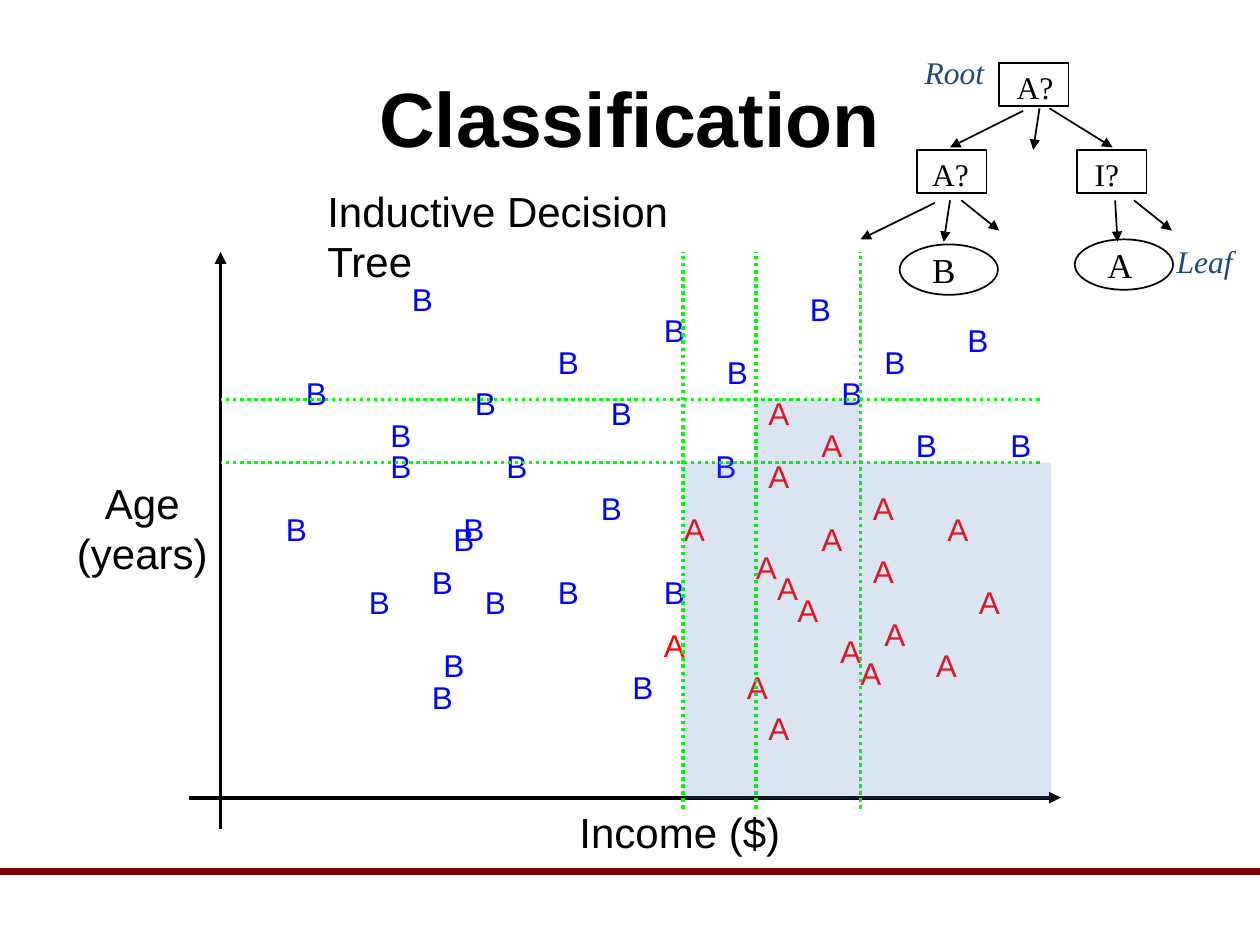
from dataclasses import dataclass, field
from typing import Optional

import pptx
import pptx.dml.color
import pptx.enum.dml
import pptx.enum.shapes
import pptx.enum.text
import pptx.oxml.ns
import pptx.util
from lxml import etree

RGBColor = pptx.dml.color.RGBColor
BLACK = RGBColor(0x00, 0x00, 0x00)
RED = RGBColor(0xFF, 0x00, 0x00)
BLUE = RGBColor(0x00, 0x00, 0xFF)
GREEN = RGBColor(0x00, 0xFF, 0x00)
MAROON = RGBColor(0x80, 0x00, 0x00)
NAVY = RGBColor(0x1F, 0x49, 0x7D)
SHADE = RGBColor(0x4F, 0x81, 0xBD)

SHAPES = pptx.enum.shapes.MSO_SHAPE
ALIGN = pptx.enum.text.PP_ALIGN
ANCHOR = pptx.enum.text.MSO_ANCHOR
AUTO_SIZE = pptx.enum.text.MSO_AUTO_SIZE
DOTTED = pptx.enum.dml.MSO_LINE.ROUND_DOT


@dataclass
class Label:
    text: str
    left: float
    top: float
    width: float
    height: float
    font: dict
    color: RGBColor = BLACK
    paragraph: dict = field(default_factory=dict)
    frame: dict = field(default_factory=dict)


@dataclass
class Line:
    start: tuple[float, float]
    end: tuple[float, float]
    color: RGBColor = BLACK
    weight: float = 1
    dash: Optional[int] = None
    arrow: bool = True


@dataclass
class Outline:
    kind: int
    left: float
    top: float
    width: float
    height: float
    fill: Optional[RGBColor] = None


def length(inches: float) -> pptx.util.Length:
    """Convert layout units (inches) to centimetres."""
    return pptx.util.Cm(inches * 2.54)


def apply(target, values: dict) -> None:
    for name, value in values.items():
        setattr(target, name, value)


def font(size: float, name: str = "Arial", **extra) -> dict:
    return {"name": name, "size": pptx.util.Pt(size), **extra}


def draw_label(slide, label: Label) -> None:
    box = slide.shapes.add_textbox(
        *map(length, (label.left, label.top, label.width, label.height)))
    frame = box.text_frame
    apply(frame, {"word_wrap": False, "auto_size": AUTO_SIZE.SHAPE_TO_FIT_TEXT,
                  **label.frame})
    frame.text = label.text
    for paragraph in frame.paragraphs:
        apply(paragraph, label.paragraph)
        apply(paragraph.font, label.font)
        paragraph.font.color.rgb = label.color


def draw_line(slide, line: Line) -> None:
    connector = slide.shapes.add_connector(
        pptx.enum.shapes.MSO_CONNECTOR.STRAIGHT, *map(length, line.start + line.end))
    connector.line.color.rgb = line.color
    connector.line.width = pptx.util.Pt(line.weight)
    if line.dash is not None:
        connector.line.dash_style = line.dash
    if line.arrow:
        etree.SubElement(connector.line._get_or_add_ln(),
                         pptx.oxml.ns.qn("a:tailEnd"), type="triangle")
    etree.SubElement(connector._element.spPr, pptx.oxml.ns.qn("a:effectLst"))


def draw_outline(slide, outline: Outline) -> None:
    shape = slide.shapes.add_shape(outline.kind, *map(
        length, (outline.left, outline.top, outline.width, outline.height)))
    shape.shadow.inherit = False
    if outline.fill is None:
        shape.fill.background()
        shape.line.color.rgb = BLACK
        shape.line.width = pptx.util.Pt(1)
    else:
        shape.fill.solid()
        shape.fill.fore_color.rgb = outline.fill
        shape.line.fill.background()
        color = shape._element.spPr.find(".//" + pptx.oxml.ns.qn("a:srgbClr"))
        etree.SubElement(color, pptx.oxml.ns.qn("a:alpha"), val="20000")


# Positions of the scattered class marks
B_MARKS = [
    (3.67, 3), (3.92, 3.5), (3.33, 5.33), (4.75, 3.08), (6.92, 2.67), (2.33, 2.92),
    (5.17, 2.42), (7.92, 3.33), (7.17, 3.33), (5.17, 4.5), (3.17, 2.17), (4.92, 5.25),
    (4.33, 4.5), (3.58, 4), (4.67, 3.83), (4.33, 2.67), (3, 3.5), (5.58, 3.5),
    (3.33, 4.42), (5.67, 2.75), (3.5, 4.08), (3.75, 4.58), (2.17, 4), (3, 3.25),
    (3.42, 5.08), (2.83, 4.58), (6.33, 2.25), (7.58, 2.5), (6.58, 2.92),
]
A_MARKS = [
    (5.9, 4.3), (6.07, 4.47), (6.23, 4.64), (6.92, 4.83), (6.83, 3.83), (5.33, 4),
    (5.83, 5.25), (6.57, 4.97), (5.17, 4.92), (7.42, 4), (6, 3.58), (6.73, 5.14),
    (6, 5.58), (6.42, 4.08), (6.83, 4.33), (7.33, 5.08), (7.67, 4.58), (6.42, 3.33),
    (6, 3.08),
]

# Split thresholds and the regions they enclose
INCOME_SPLITS = (5.42, 6, 6.83)
AGE_SPLITS = (3.67, 3.17)
REGIONS = [
    Outline(SHAPES.RECTANGLE, 5.42, 3.67, 2.92, 2.67, SHADE),
    Outline(SHAPES.RECTANGLE, 6, 3.17, 0.83, 0.5, SHADE),
]

# Decision tree
TREE_BOXES = [(7.93, 0.5), (7.28, 1.19), (8.55, 1.19)]
TREE_LEAVES = [(8.53, 1.9), (7.14, 1.94)]
TREE_ARROWS = [
    ((8.12, 0.88), (7.54, 1.17)), ((8.33, 0.86), (8.83, 1.17)),
    ((8.25, 0.86), (8.2, 1.19)), ((7.42, 1.61), (6.83, 1.9)),
    ((7.63, 1.59), (7.93, 1.83)), ((7.54, 1.59), (7.49, 1.92)),
    ((9, 1.59), (9.3, 1.83)), ((8.85, 1.59), (8.87, 1.92)),
]
NODE_FONT = font(18, "Times New Roman")
LEAF_FONT = font(20, "Times New Roman")
NOTE_FONT = font(18, "Times New Roman", italic=True)
TREE_LABELS = [
    Label("A?", 7.97, 0.49, 0.49, 0.4, NODE_FONT),
    Label("A?", 7.3, 1.18, 0.49, 0.4, NODE_FONT),
    Label("I?", 8.59, 1.18, 0.4, 0.4, NODE_FONT),
    Label("Root", 7.24, 0.37, 0.83, 0.4, NOTE_FONT, NAVY, frame={"word_wrap": True}),
    Label("Leaf", 9.24, 1.87, 0.95, 0.4, NOTE_FONT, NAVY, frame={"word_wrap": True}),
    Label("A", 8.69, 1.88, 0.41, 0.43, LEAF_FONT),
    Label("B", 7.3, 1.92, 0.38, 0.43, LEAF_FONT),
]

# Title, subtitle and axis names
CENTERED = {"alignment": ALIGN.CENTER}
TITLE = Label("Classification", 0.5, 0.3, 9, 1.25, font(44, bold=True),
              paragraph=CENTERED,
              frame={"word_wrap": True, "auto_size": AUTO_SIZE.NONE,
                     "vertical_anchor": ANCHOR.MIDDLE})
SUBTITLE = Label("Inductive Decision Tree", 2.5, 1.42, 3.34, 0.5, font(24),
                 frame={"word_wrap": True, "auto_size": AUTO_SIZE.NONE})
AXIS_NAMES = [
    Label("Age\n(years)", 0.5, 3.74, 1.26, 0.91, font(24), paragraph=CENTERED),
    Label("Income ($)", 4.5, 6.35, 1.81, 0.5, font(24)),
]


def main() -> None:
    presentation = pptx.Presentation()
    presentation.slide_width = length(10)
    presentation.slide_height = length(7.5)
    slide = presentation.slides.add_slide(presentation.slide_layouts[6])

    # Footer rule, title and axes
    draw_line(slide, Line((0, 6.92), (10, 6.92), MAROON, 4, arrow=False))
    draw_label(slide, TITLE)
    draw_line(slide, Line((1.75, 6.58), (1.75, 2), weight=2.25))
    draw_line(slide, Line((1.5, 6.33), (8.42, 6.33), weight=2.25))

    # Scatter marks
    for text, color, width, marks in (("B", BLUE, 0.36, B_MARKS),
                                      ("A", RED, 0.37, A_MARKS)):
        for left, top in marks:
            draw_label(slide, Label(text, left, top, width, 0.4, font(18), color))
    draw_label(slide, SUBTITLE)

    # Splits and shaded regions
    splits = [((x, 6.42), (x, 2)) for x in INCOME_SPLITS]
    splits += [((8.25, y), (1.75, y)) for y in AGE_SPLITS]
    for start, end in splits:
        draw_line(slide, Line(start, end, GREEN, 2, DOTTED, arrow=False))
    for region in REGIONS:
        draw_outline(slide, region)

    # Decision tree
    for left, top in TREE_BOXES:
        draw_outline(slide, Outline(SHAPES.RECTANGLE, left, top, 0.55, 0.34))
    for left, top in TREE_LEAVES:
        draw_outline(slide, Outline(SHAPES.OVAL, left, top, 0.78, 0.4))
    for start, end in TREE_ARROWS:
        draw_line(slide, Line(start, end))
    for label in TREE_LABELS + AXIS_NAMES:
        draw_label(slide, label)

    presentation.save("out.pptx")


if __name__ == "__main__":
    main()
